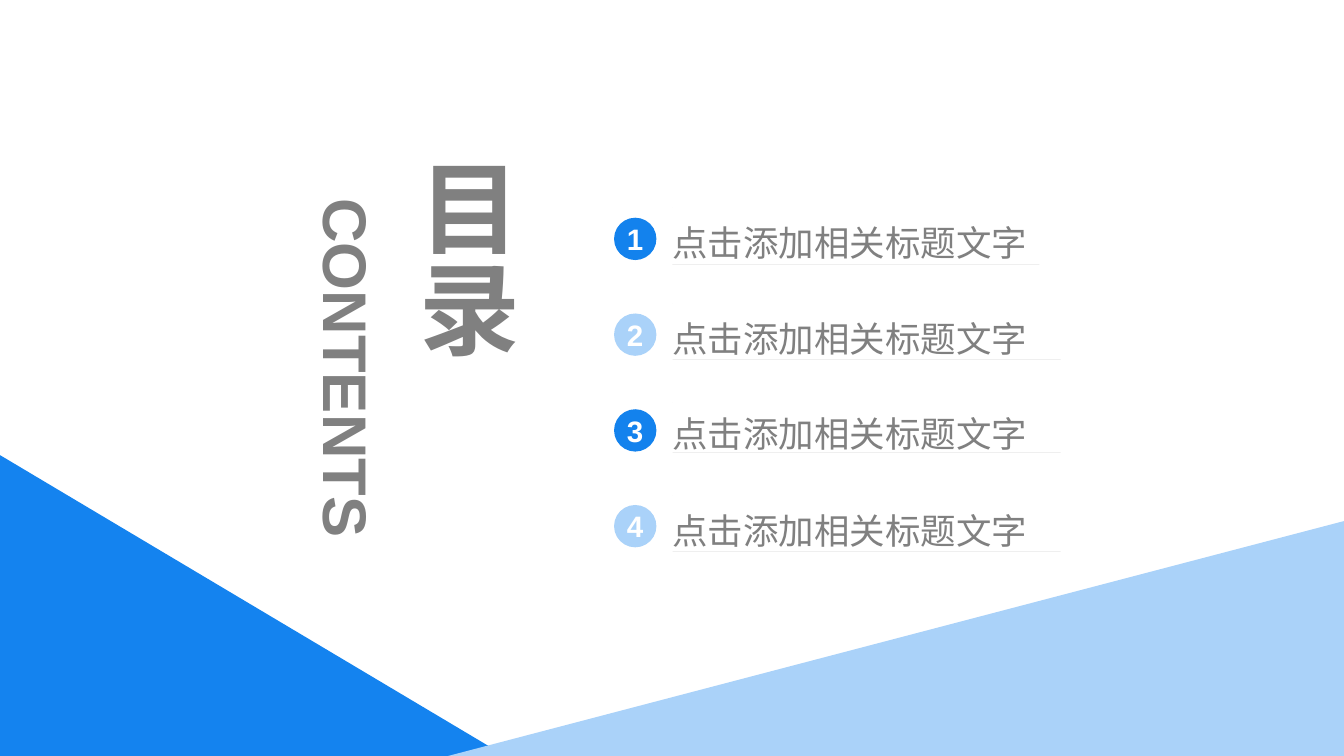
"""Build a contents slide with four numbered entries and two corner wedges."""
import dataclasses

import pptx
import pptx.dml.color
import pptx.enum.shapes
import pptx.enum.text
import pptx.util

Inches = pptx.util.Inches
ALIGN = pptx.enum.text.PP_ALIGN
ANCHOR = pptx.enum.text.MSO_ANCHOR


@dataclasses.dataclass(frozen=True)
class Theme:
    font: str = "Arial"
    grey: str = "808080"
    white: str = "FFFFFF"
    blue: str = "1382ED"
    wedge_blue: str = "1483EF"
    pale: str = "AAD2F9"
    title: float = 72
    subtitle: float = 44
    entry: float = 25.3
    number: float = 21.1


@dataclasses.dataclass(frozen=True)
class Entry:
    text: str
    top: float
    bottom: float
    right: float = 10.52


@dataclasses.dataclass(frozen=True)
class Wedge:
    points: tuple[tuple[float, float], ...]
    color: str


THEME = Theme()
ENTRY_LEFT = 6.67
BADGE_LEFT, BADGE_TOP, BADGE_SIZE, BADGE_PITCH = 6.09, 2.16, 0.42, 0.95
LABEL = "点击添加相关标题文字"
ENTRIES = (
    Entry(LABEL, 2.06, 2.62, right=10.31),
    Entry(LABEL, 3.01, 3.57),
    Entry(LABEL, 3.99, 4.49),
    Entry(LABEL, 4.92, 5.47),
)
WEDGES = (
    Wedge(((-0.16, 4.42), (5.6, 7.85), (-0.16, 7.85)), THEME.wedge_blue),
    Wedge(((13.9, 5.02), (13.9, 7.85), (3.11, 7.85)), THEME.pale),
)


def rgb(color: str) -> pptx.dml.color.RGBColor:
    """Turn a hex string into a colour."""
    return pptx.dml.color.RGBColor.from_string(color)


def paint(sp, color: str) -> None:
    """Give a shape a plain fill with no line or shadow."""
    sp.fill.solid()
    sp.fill.fore_color.rgb = rgb(color)
    sp.line.fill.background()
    sp.shadow.inherit = False


def write(sp, text: str, size: float, color: str, bold: bool = True,
          align=ALIGN.CENTER, anchor=ANCHOR.MIDDLE, spacing: float = 1.0) -> None:
    """Set one formatted paragraph in a shape without margins."""
    tf = sp.text_frame
    tf.margin_left = tf.margin_top = tf.margin_right = tf.margin_bottom = 0
    tf.word_wrap = True
    tf.auto_size = pptx.enum.text.MSO_AUTO_SIZE.NONE
    tf.vertical_anchor = anchor
    tf.text = text
    p = tf.paragraphs[0]
    p.alignment = align
    p.line_spacing = spacing
    p.font.name = THEME.font
    p.font.size = pptx.util.Pt(size)
    p.font.bold = bold
    p.font.color.rgb = rgb(color)


def add_heading(s) -> None:
    """Place the vertical title and the rotated subtitle."""
    title = s.shapes.title
    title.left, title.top = Inches(4.02), Inches(1.57)
    title.width, title.height = Inches(1.21), Inches(4.15)
    write(title, "目录", THEME.title, THEME.grey, align=ALIGN.LEFT)
    title.text_frame._txBody.bodyPr.set("vert", "eaVert")

    subtitle = s.shapes.add_textbox(Inches(1.64), Inches(3.28), Inches(3.61), Inches(0.74))
    subtitle.rotation = 90
    write(subtitle, "CONTENTS", THEME.subtitle, THEME.grey, anchor=ANCHOR.TOP)


def add_badge(s, index: int) -> None:
    """Draw the numbered circle of an entry."""
    top = BADGE_TOP + index * BADGE_PITCH
    badge = s.shapes.add_shape(
        pptx.enum.shapes.MSO_SHAPE.OVAL,
        Inches(BADGE_LEFT), Inches(top), Inches(BADGE_SIZE), Inches(BADGE_SIZE))
    paint(badge, THEME.pale if index % 2 else THEME.blue)
    write(badge, str(index + 1), THEME.number, THEME.white)


def add_entry(s, entry: Entry) -> None:
    """Draw an entry whose outline is a hairline under its text."""
    left, right = Inches(ENTRY_LEFT), Inches(entry.right)
    top, bottom = Inches(entry.top), Inches(entry.bottom)
    outline = s.shapes.build_freeform(left, bottom)
    outline.add_line_segments([(right, bottom)])
    outline.move_to(left, top)
    outline.add_line_segments([(left, top)])
    sp = outline.convert_to_shape()
    paint(sp, THEME.grey)
    write(sp, entry.text, THEME.entry, THEME.grey, bold=False,
          align=ALIGN.LEFT, spacing=1.3)


def add_wedge(s, wedge: Wedge) -> None:
    """Draw a triangle that bleeds off a bottom corner."""
    start, *rest = [(Inches(x), Inches(y)) for x, y in wedge.points]
    outline = s.shapes.build_freeform(*start)
    outline.add_line_segments(rest)
    paint(outline.convert_to_shape(), wedge.color)


def main() -> None:
    """Assemble and save the slide."""
    prs = pptx.Presentation()
    prs.slide_width, prs.slide_height = Inches(13.33), Inches(7.5)
    s = prs.slides.add_slide(prs.slide_layouts.get_by_name("Title Only"))
    add_heading(s)
    for index, entry in enumerate(ENTRIES):
        add_badge(s, index)
        add_entry(s, entry)
    for wedge in WEDGES:
        add_wedge(s, wedge)
    prs.save("out.pptx")


if __name__ == "__main__":
    main()
